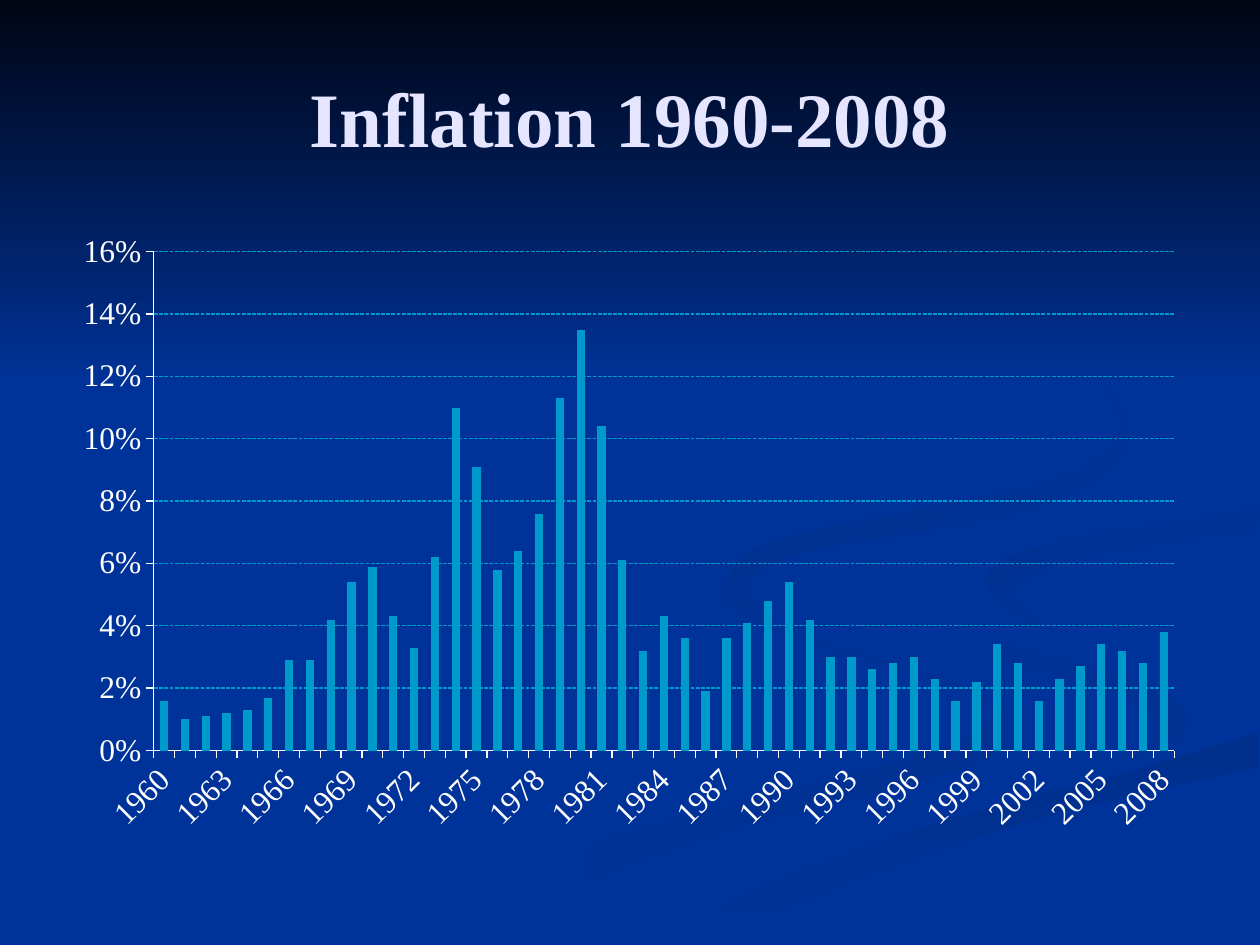
from itertools import chain

from lxml import etree
from pptx import Presentation
from pptx import util as u
from pptx.chart.data import CategoryChartData
from pptx.dml.color import RGBColor
from pptx.enum import chart as ch, dml, text
from pptx.oxml import parse_xml
from pptx.oxml.ns import nsdecls, qn

BLUE = RGBColor(0x00, 0x33, 0x99)
NIGHT = RGBColor(0x00, 0x05, 0x14)
SHADE = RGBColor(0x00, 0x31, 0x93)
MID_SHADE = RGBColor(0x00, 0x30, 0x91)
DARK_SHADE = RGBColor(0x00, 0x2F, 0x8E)
DEEP_SHADE = RGBColor(0x00, 0x2F, 0x8C)
CYAN = RGBColor(0x00, 0x99, 0xCC)
LAVENDER = RGBColor(0xE5, 0xE5, 0xFF)
WHITE = RGBColor(0xFF, 0xFF, 0xFF)
FONT = "Times New Roman"

SLIDE_W, SLIDE_H = 10, 7.5
CURVE_STEPS = 6  # straight pieces between two knots of an edge

FIRST_YEAR = 1960
INFLATION_PERCENT = [
    1.6, 1.0, 1.1, 1.2, 1.3, 1.7, 2.9, 2.9, 4.2, 5.4,
    5.9, 4.3, 3.3, 6.2, 11.0, 9.1, 5.8, 6.4, 7.6, 11.3,
    13.5, 10.4, 6.1, 3.2, 4.3, 3.6, 1.9, 3.6, 4.1, 4.8,
    5.4, 4.2, 3.0, 3.0, 2.6, 2.8, 3.0, 2.3, 1.6, 2.2,
    3.4, 2.8, 1.6, 2.3, 2.7, 3.4, 3.2, 2.8, 3.8]

# Each edge is a smooth curve through a few knots, in inches from the box corner.
LEFT_OUTER = [(5.75, 4.59), (5.7, 4.72), (5.93, 4.91), (6.54, 5.13), (7.28, 5.35),
              (7.81, 5.56), (7.83, 5.74), (7.39, 5.98), (6.16, 6.29), (4.58, 6.74),
              (3, 7.49)]
LEFT_INNER = [(3.61, 7.49), (4.99, 6.87), (6.23, 6.47), (7.4, 6.18), (7.91, 5.97),
              (8, 5.81), (7.81, 5.53), (7.15, 5.28), (6.42, 5.07), (5.87, 4.81),
              (5.75, 4.59)]
MAIN_RIM = [(9.99, 3.87), (9.2, 4.01), (8.3, 4.15), (7.55, 4.32), (7.25, 4.64)]
MAIN_FOLD = [(7.25, 4.64), (7.45, 4.9), (8.12, 5.15), (8.89, 5.35), (9.31, 5.53),
             (9.43, 5.75), (9.32, 5.89), (8.94, 6.05)]
MAIN_TAIL = [(8.94, 6.05), (8.12, 6.25), (6.63, 6.68), (5.73, 7.03), (4.77, 7.49)]
MAIN_UNDERSIDE = [(5.03, 7.49), (5.99, 7.06), (6.96, 6.69), (7.97, 6.38),
                  (9.04, 6.1), (9.99, 5.81)]
MAIN_INSIDE = [(9.99, 5.38), (9.04, 5.19), (8.32, 4.98), (7.94, 4.8), (7.81, 4.6)]
MAIN_UPPER = [(7.81, 4.6), (8, 4.42), (8.65, 4.24), (9.33, 4.15), (9.99, 4.02)]
FOLD_BACK = [(8.94, 6.05), (9.14, 5.89), (9.15, 5.71), (8.92, 5.53), (8.38, 5.36),
             (7.66, 5.12), (7.33, 4.88), (7.25, 4.64)]
LOWER_FRONT = [(9.98, 6.09), (8.61, 6.4), (7.52, 6.72), (6.49, 7.1), (5.71, 7.49)]
RIGHT_BACK = [(9.98, 4.2), (9.36, 4.29), (8.59, 4.43), (8.16, 4.59), (8.05, 4.74),
              (8.26, 4.96)]
RIGHT_FRONT = [(8.26, 4.96), (7.97, 4.83), (7.81, 4.6)]
TOP_OUTER = [(7.62, 2.33), (8.21, 2.61), (8.73, 2.99), (8.94, 3.44), (8.76, 3.78),
             (8.25, 4.02), (7.39, 4.21), (6.49, 4.36), (6.06, 4.52), (5.93, 4.7),
             (6.22, 5)]
TOP_INNER = [(6.22, 5), (5.9, 4.84), (5.77, 4.62), (5.97, 4.37), (6.49, 4.2),
             (7.33, 4.04), (8.18, 3.86), (8.7, 3.65), (8.89, 3.35), (8.62, 2.92),
             (8.05, 2.54), (7.62, 2.33)]

RIBBONS = [  # edges in order round the outline, start colour, end colour, angle
    ([LEFT_OUTER, LEFT_INNER], BLUE, SHADE, 0),
    ([MAIN_FOLD, FOLD_BACK], BLUE, SHADE, 45),
    ([MAIN_UNDERSIDE, LOWER_FRONT], DEEP_SHADE, BLUE, 90),
    ([MAIN_RIM, MAIN_FOLD, MAIN_TAIL, MAIN_UNDERSIDE, MAIN_INSIDE, MAIN_UPPER],
     BLUE, BLUE, 0),
    ([MAIN_UPPER, RIGHT_BACK, RIGHT_FRONT], MID_SHADE, BLUE, 45),
    ([TOP_OUTER, TOP_INNER], DARK_SHADE, BLUE, 45)]


def smooth(knots):
    """Return points of a Catmull-Rom curve that passes through all knots."""
    padded = [knots[0], *knots, knots[-1]]
    points = [knots[0]]
    for span in zip(padded, padded[1:], padded[2:], padded[3:]):
        for step in range(1, CURVE_STEPS + 1):
            t = step / CURVE_STEPS
            points.append(tuple(
                b + t / 2 * (c - a + t * (2 * a - 5 * b + 4 * c - d
                                          + t * (3 * b - a - 3 * c + d)))
                for a, b, c, d in zip(*span)))
    return points


def fill_gradient(sp, start, end, angle):
    """Fill without outline; the angle runs clockwise from left-to-right."""
    sp.shadow.inherit = False
    sp.line.fill.background()
    sp.fill.gradient()
    sp.fill.gradient_angle = (360 - angle) % 360
    for stop, color, pos in zip(sp.fill.gradient_stops, (start, end), (0, 1)):
        stop.color.rgb = color
        stop.position = pos


def add_outline(s, box, points):
    left, top = box[:2]
    first, *rest = [(u.Inches(left + x), u.Inches(top + y)) for x, y in points]
    fb = s.shapes.build_freeform(*first)
    fb.add_line_segments(rest, close=True)
    return fb.convert_to_shape()


def add_backdrop(s, box):
    s.background.fill.solid()
    s.background.fill.fore_color.rgb = BLUE
    for edges, *gradient in RIBBONS:
        points = chain.from_iterable(map(smooth, edges))
        fill_gradient(add_outline(s, box, points), *gradient)
    width, band_height = box[2], 3.08
    band = [(0, 0), (0, band_height), (width, band_height), (width, 0)]
    fill_gradient(add_outline(s, box, band), NIGHT, BLUE, 90)


def set_font(font, size, color, bold=False):
    font.name, font.size, font.bold = FONT, u.Pt(size), bold
    font.color.rgb = color


def add_text(s, box, words, align=text.PP_ALIGN.CENTER, **style):
    tf = s.shapes.add_textbox(*map(u.Inches, box)).text_frame
    tf.word_wrap = True
    tf.vertical_anchor = text.MSO_ANCHOR.MIDDLE
    p = tf.paragraphs[0]
    p.alignment = align
    r = p.add_run()
    r.text = words
    set_font(r.font, **style)


def style_line(line, color):
    line.color.rgb = color
    line.width = u.Pt(0.75)


def style_axis(axis):
    axis.major_tick_mark = ch.XL_TICK_MARK.OUTSIDE
    style_line(axis.format.line, WHITE)
    set_font(axis.tick_labels.font, 18, WHITE)


def fix_plot_area(chart, **fractions):
    """Set the inner plot area as fractions of the chart's box."""
    area = chart.element.find(".//" + qn("c:plotArea"))
    for old in area.findall(qn("c:layout")):
        area.remove(old)
    layout = parse_xml(f"<c:layout {nsdecls('c')}><c:manualLayout/></c:layout>")
    values = dict(layoutTarget="inner", xMode="edge", yMode="edge", **fractions)
    for tag, val in values.items():
        etree.SubElement(layout[0], qn("c:" + tag)).set("val", str(val))
    area.insert(0, layout)


def slant_every_third_label(chart):
    cat_ax = chart.element.find(".//" + qn("c:catAx"))
    cat_ax.find(qn("c:txPr")).find(qn("a:bodyPr")).set("rot", str(-45 * 60000))
    last = cat_ax.find(qn("c:noMultiLvlLbl"))
    for tag, val in (("tickLblSkip", 3), ("tickMarkSkip", 1)):
        last.addprevious(parse_xml(f'<c:{tag} {nsdecls("c")} val="{val}"/>'))


def add_inflation_chart(s, box):
    data = CategoryChartData(number_format="0.0%")
    data.categories = [str(FIRST_YEAR + i) for i in range(len(INFLATION_PERCENT))]
    data.add_series("Series 1", [round(v / 100, 3) for v in INFLATION_PERCENT])
    chart = s.shapes.add_chart(ch.XL_CHART_TYPE.COLUMN_CLUSTERED,
                               *map(u.Inches, box), data).chart
    chart.has_legend = chart.has_title = False
    set_font(chart.font, 18, WHITE)
    plot = chart.plots[0]
    plot.vary_by_categories = False
    plot.gap_width = 150
    fill = plot.series[0].format.fill
    fill.solid()
    fill.fore_color.rgb = CYAN

    axis = chart.value_axis
    for each in (chart.category_axis, axis):
        style_axis(each)
    axis.minimum_scale, axis.maximum_scale, axis.major_unit = 0, 0.16, 0.02
    axis.tick_labels.number_format = "0%"
    axis.tick_labels.number_format_is_linked = False
    grid = axis.major_gridlines.format.line
    style_line(grid, CYAN)
    grid.dash_style = dml.MSO_LINE.SQUARE_DOT
    fix_plot_area(chart, x=0.08, y=0.05, w=0.9, h=0.8)
    slant_every_third_label(chart)


def main():
    prs = Presentation()
    prs.slide_width, prs.slide_height = u.Inches(SLIDE_W), u.Inches(SLIDE_H)
    s = prs.slides.add_slide(prs.slide_layouts[6])
    add_backdrop(s, (0, 0, SLIDE_W, SLIDE_H))
    add_text(s, (0.5, 0.3, 9, 1.25), "Inflation 1960-2008",
             size=44, color=LAVENDER, bold=True)
    add_inflation_chart(s, (0.5, 1.75, 9, 4.95))
    prs.save("out.pptx")


if __name__ == "__main__":
    main()
